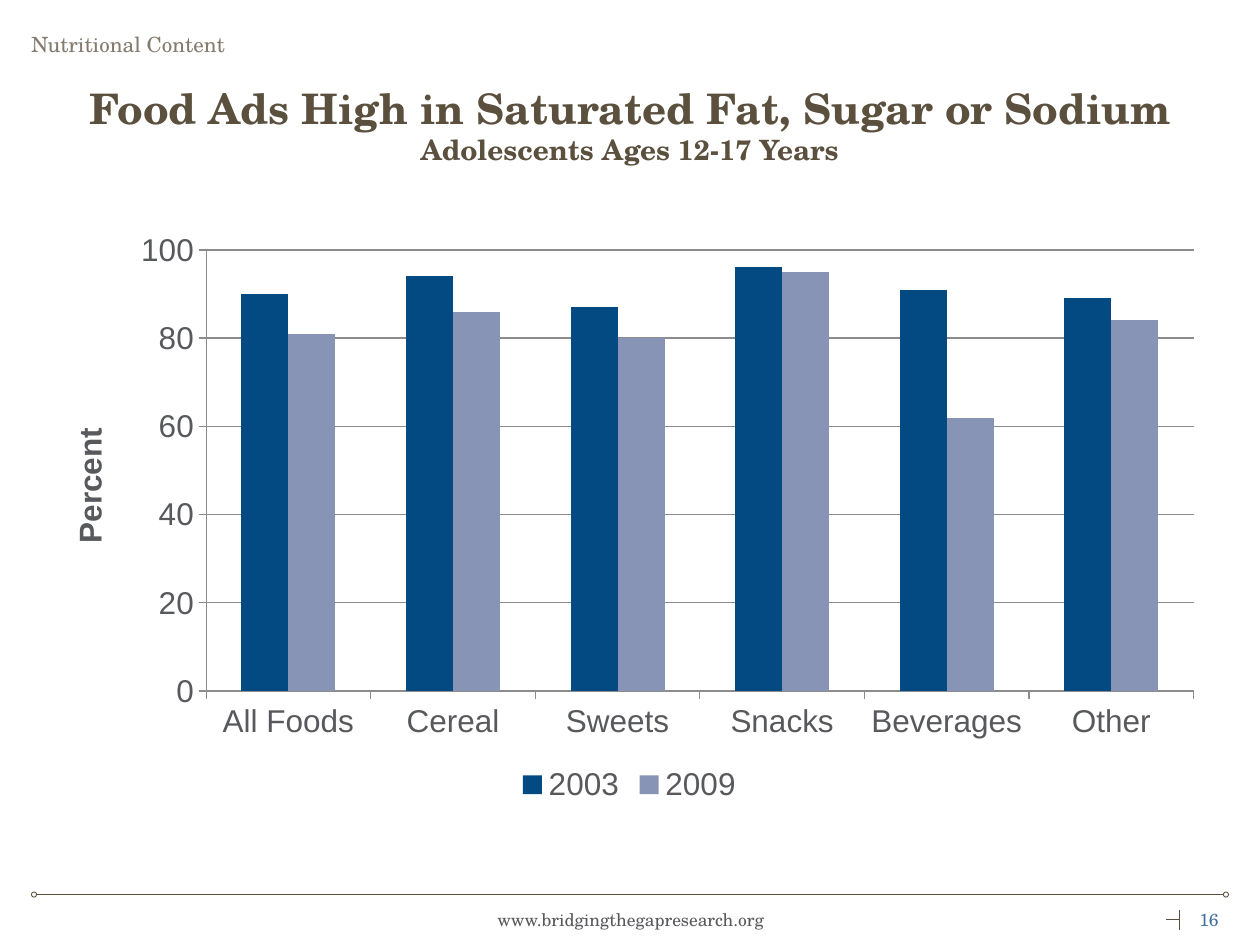
from lxml import etree
from pptx import Presentation
from pptx.chart.data import CategoryChartData
from pptx.dml.color import RGBColor
from pptx.enum.chart import XL_CHART_TYPE, XL_LEGEND_POSITION, XL_TICK_MARK
from pptx.enum.shapes import MSO_CONNECTOR, MSO_SHAPE
from pptx.enum.text import MSO_ANCHOR, PP_ALIGN
from pptx.oxml.ns import qn
from pptx.util import Inches, Pt

COLUMN = XL_CHART_TYPE.COLUMN_CLUSTERED
BOTTOM = XL_LEGEND_POSITION.BOTTOM
OUTSIDE = XL_TICK_MARK.OUTSIDE
STRAIGHT = MSO_CONNECTOR.STRAIGHT
OVAL = MSO_SHAPE.OVAL
TOP, MIDDLE, BASE = MSO_ANCHOR.TOP, MSO_ANCHOR.MIDDLE, MSO_ANCHOR.BOTTOM
LEFT, CENTER = PP_ALIGN.LEFT, PP_ALIGN.CENTER

SERIF, SANS = "TeX Gyre Schola", "Arial"
COLORS = {"brown": "5B4F3E", "gray": "58595C", "blue": "3F6F9E",
          "2003": "034A82", "2009": "8894B5", "grid": "8C8C8C"}

SECTION = "Nutritional Content"
TITLE = [("Food Ads High in Saturated Fat, Sugar or Sodium", 24),
         ("Adolescents Ages 12-17 Years", 16)]
SITE, PAGE = "www.bridgingthegapresearch.org", "16"
FOODS = ["All Foods", "Cereal", "Sweets", "Snacks", "Beverages", "Other"]
ADS = {"2003": [90, 94, 87, 96, 91, 89],
       "2009": [81, 86, 80, 95, 62, 84]}
CHART_BOX = (0.33, 1.75, 9.33, 4.67)
PLOT = {"x": 0.14, "y": 0.05, "w": 0.84, "h": 0.75}  # shares of the chart box

RULES = [((0.29, 7.1), (9.71, 7.1)),
         ((9.36, 7.22), (9.36, 7.38)),
         ((9.25, 7.3), (9.36, 7.3))]
DOTS = [(0.25, 7.08), (9.71, 7.08)]
DOT = 0.04


def rgb(name):
    return RGBColor.from_string(COLORS[name])


def add_text(slide, box, runs, color, align=LEFT, anchor=TOP, inset=None, bold=False):
    """Put runs of (text, size) on separate lines of one paragraph."""
    frame = slide.shapes.add_textbox(*map(Inches, box)).text_frame
    frame.word_wrap = True
    frame.vertical_anchor = anchor
    if inset is not None:
        frame.margin_left = frame.margin_right = Inches(inset)
        frame.margin_top = frame.margin_bottom = Inches(inset)
    para = frame.paragraphs[0]
    para.alignment = align
    para.font.name, para.font.bold = SERIF, bold
    para.font.color.rgb = rgb(color)
    for i, (text, size) in enumerate(runs):
        if i:
            para.add_line_break()
        run = para.add_run()
        run.text = text
        run.font.size = Pt(size)
    return para


def set_line(line, color, width):
    line.color.rgb = rgb(color)
    line.width = Pt(width)


def add_rules(slide):
    for start, end in RULES:
        rule = slide.shapes.add_connector(STRAIGHT, *map(Inches, start + end))
        set_line(rule.line, "brown", 0.5)
        etree.SubElement(rule._element.spPr, qn("a:effectLst"))
    for spot in DOTS:
        dot = slide.shapes.add_shape(OVAL, *map(Inches, spot + (DOT, DOT)))
        dot.shadow.inherit = False
        dot.fill.background()
        set_line(dot.line, "brown", 0.5)


def place_plot(chart):
    """Fix the inner plot area at the shares in PLOT."""
    area = chart._chartSpace.chart.plotArea
    for old in area.findall(qn("c:layout")):
        area.remove(old)
    layout = etree.Element(qn("c:layout"))
    area.insert(0, layout)
    manual = etree.SubElement(layout, qn("c:manualLayout"))
    parts = [("layoutTarget", "inner"), ("xMode", "edge"), ("yMode", "edge")]
    for tag, value in parts + list(PLOT.items()):
        etree.SubElement(manual, qn("c:" + tag)).set("val", str(value))


def add_ads(slide):
    data = CategoryChartData()
    data.categories = FOODS
    for year, values in ADS.items():
        data.add_series(year, values)
    chart = slide.shapes.add_chart(COLUMN, *map(Inches, CHART_BOX), data).chart
    chart.has_title = False
    chart.font.name, chart.font.size = SANS, Pt(18)
    chart.font.color.rgb = rgb("gray")
    chart.has_legend = True
    chart.legend.position = BOTTOM
    chart.legend.include_in_layout = False

    plot = chart.plots[0]
    plot.gap_width, plot.overlap = 150, 0
    plot.vary_by_categories = False
    for bars in plot.series:
        bars.format.fill.solid()
        bars.format.fill.fore_color.rgb = rgb(bars.name)

    scale = chart.value_axis
    scale.minimum_scale, scale.maximum_scale, scale.major_unit = 0, 100, 20
    scale.has_major_gridlines = True
    set_line(scale.major_gridlines.format.line, "grid", 0.75)
    for axis in (scale, chart.category_axis):
        axis.major_tick_mark = OUTSIDE
        set_line(axis.format.line, "grid", 0.75)
    label = scale.axis_title.text_frame
    label.text = "Percent"
    font = label.paragraphs[0].font
    font.name, font.size, font.bold = SANS, Pt(18), True
    font.color.rgb = rgb("gray")
    place_plot(chart)


def main():
    deck = Presentation()
    deck.slide_width, deck.slide_height = Inches(10), Inches(7.5)
    slide = deck.slides.add_slide(deck.slide_layouts[6])
    add_text(slide, (9.42, 7.1, 0.5, 0.4), [(PAGE, 10)], "blue", anchor=MIDDLE)
    add_rules(slide)
    add_text(slide, (3.42, 7.1, 3.17, 0.4), [(SITE, 10)], "gray", CENTER, MIDDLE)
    add_text(slide, (0, 0.58, 10, 0.74), TITLE, "brown", CENTER, BASE, 0, True)
    add_ads(slide)
    para = add_text(slide, (0.25, 0.25, 8.17, 0.2), [(SECTION, 12)], "brown", inset=0)
    tint = para.runs[0].font
    tint.color.rgb = rgb("brown")
    shade = tint._element.find(".//" + qn("a:srgbClr"))
    etree.SubElement(shade, qn("a:alpha")).set("val", "75000")
    deck.save("out.pptx")


if __name__ == "__main__":
    main()
